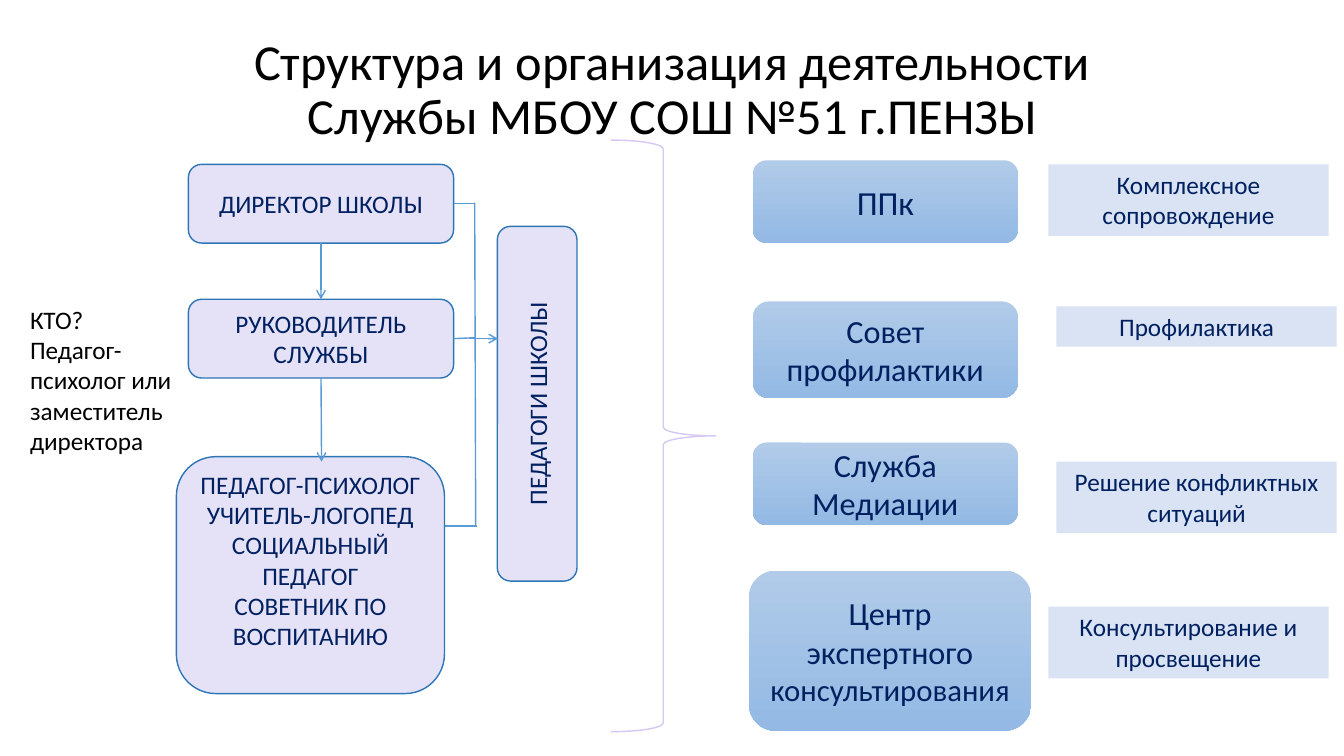
from lxml import etree
from pptx import Presentation
from pptx import util as u
from pptx.dml.color import RGBColor
from pptx.enum import shapes, text
from pptx.oxml import ns

COLORS = {
    "title": "000000", "ink": "002060", "staff": "E5E2F7", "border": "2E75B6",
    "arrow": "5B9BD5", "brace": "D5C8F4", "task": "DAE3F3",
    "unit_top": "B1CBE9", "unit_bottom": "93B9E4",
}
FONT = "Calibri"
CENTER = text.PP_ALIGN.CENTER
MIDDLE = text.MSO_ANCHOR.MIDDLE
TOP = text.MSO_ANCHOR.TOP
KINDS = shapes.MSO_SHAPE


def rgb(name):
    """Return the named palette colour."""
    return RGBColor.from_string(COLORS[name])


def apply(target, values):
    """Set each attribute of the target from a dict."""
    for name, value in values.items():
        setattr(target, name, value)


def points(*lengths):
    """Convert numbers to point lengths."""
    return [u.Pt(length) for length in lengths]


def write(frame, paragraphs, color, align=CENTER, anchor=MIDDLE, **frame_format):
    """Fill a text frame with paragraphs made of (text, size) runs."""
    apply(frame, {"word_wrap": True, "auto_size": text.MSO_AUTO_SIZE.NONE,
                  "vertical_anchor": anchor, **frame_format})
    for index, runs in enumerate(paragraphs):
        paragraph = frame.add_paragraph() if index else frame.paragraphs[0]
        paragraph.alignment = align
        for words, size in runs:
            run = paragraph.add_run()
            run.text = words
            apply(run.font, {"name": FONT, "size": u.Pt(size)})
            run.font.color.rgb = rgb(color)


def add_title(slide, words):
    """Place and format the slide title."""
    title = slide.shapes.title
    left, top, width, height = points(111.6, 13, 737.3, 104.4)
    apply(title, {"left": left, "top": top, "width": width, "height": height})
    write(title.text_frame, [[(words, 36)]], "title")
    title.text_frame.paragraphs[0].line_spacing = 0.9


def add_block(slide, kind, box, fill=None, line=None):
    """Add a preset shape with a plain fill and outline."""
    block = slide.shapes.add_shape(kind, *points(*box))
    block.shadow.inherit = False
    if fill:
        block.fill.solid()
        block.fill.fore_color.rgb = rgb(fill)
    else:
        block.fill.background()
    if line:
        block.line.color.rgb = rgb(line)
        block.line.width = u.Pt(1)
    else:
        block.line.fill.background()
    return block


def add_staff(slide, box, lines, **frame_format):
    """Add a rounded, outlined box for a staff role."""
    staff = add_block(slide, KINDS.ROUNDED_RECTANGLE, box, "staff", "border")
    write(staff.text_frame, [[(words, 18)] for words in lines], "ink", **frame_format)
    return staff


def add_unit(slide, box, runs):
    """Add a rounded gradient box for a unit of the service."""
    unit = add_block(slide, KINDS.ROUNDED_RECTANGLE, box)
    unit.fill.gradient()
    unit.fill.gradient_angle = 270
    for stop, position, name in zip(unit.fill.gradient_stops, (0, 1),
                                    ("unit_top", "unit_bottom")):
        stop.position = position
        stop.color.rgb = rgb(name)
    write(unit.text_frame, [runs], "ink")


def add_task(slide, box, words):
    """Add a flat label with the task of a unit."""
    task = add_block(slide, KINDS.RECTANGLE, box, "task")
    write(task.text_frame, [[(words, 18)]], "ink", anchor=TOP)


def add_link(slide, ends, arrow=False, begin=None, end=None):
    """Add a straight line, joined to (shape, site) pairs where given."""
    link = slide.shapes.add_connector(shapes.MSO_CONNECTOR.STRAIGHT, *points(*ends))
    link.line.color.rgb = rgb("arrow")
    link.line.width = u.Pt(1)
    if begin:
        link.begin_connect(*begin)
    if end:
        link.end_connect(*end)
    properties = link._element.spPr
    if arrow:
        outline = properties.find(ns.qn("a:ln"))
        etree.SubElement(outline, ns.qn("a:tailEnd"), type="arrow")
    etree.SubElement(properties, ns.qn("a:effectLst"))


def add_staff_scheme(slide):
    """Draw the staff roles, the note beside them and their links."""
    director = add_staff(slide, (134.6, 117.4, 189.4, 56.2), ["ДИРЕКТОР ШКОЛЫ"])
    leader = add_staff(slide, (134.6, 213.8, 189.4, 56.2), ["РУКОВОДИТЕЛЬ СЛУЖБЫ"])
    add_staff(slide, (126, 326.2, 191.5, 169.2),
              ["ПЕДАГОГ-ПСИХОЛОГ", "УЧИТЕЛЬ-ЛОГОПЕД", "СОЦИАЛЬНЫЙ ПЕДАГОГ",
               "СОВЕТНИК ПО ВОСПИТАНИЮ"], margin_bottom=u.Pt(25.2))
    teachers = add_staff(slide, (257, 259.9, 253.4, 56.9), ["ПЕДАГОГИ ШКОЛЫ"])
    teachers.rotation = 270

    note = slide.shapes.add_textbox(*points(14.4, 213.8, 133.9, 115.9))
    write(note.text_frame,
          [[("КТО?", 18)], [("Педагог-психолог или заместитель директора", 18)]],
          "title", align=text.PP_ALIGN.LEFT, anchor=TOP)

    add_link(slide, (229.3, 173.6, 229.3, 213.8), True, (director, 2), (leader, 0))
    add_link(slide, (229.3, 270, 229.7, 329.8), True, (leader, 2))
    add_link(slide, (339.1, 144.7, 339.8, 375.8))
    add_link(slide, (334.8, 241.9, 355.7, 241.9), True)
    add_link(slide, (324, 145.5, 338.4, 145.5), begin=(director, 3))
    add_link(slide, (324, 241.9, 339.8, 241.2), begin=(leader, 3))
    add_link(slide, (318.2, 375.8, 340.6, 375.8))


def main():
    """Build the slide and save it."""
    deck = Presentation()
    apply(deck, {"slide_width": u.Pt(960), "slide_height": u.Pt(540)})
    slide = deck.slides.add_slide(deck.slide_layouts[5])
    add_title(slide, "Структура и организация деятельности Службы МБОУ СОШ №51 г.ПЕНЗЫ")
    add_staff_scheme(slide)
    add_block(slide, KINDS.RIGHT_BRACE, (436.3, 100.1, 74.9, 422.6), line="brace")

    units = [
        ((537.8, 114.5, 189.4, 59), [("ППк", 24)]),
        ((537.8, 215.3, 189.4, 69.1), [("Совет профилактики", 23)]),
        ((537.8, 316.1, 189.4, 59), [("Служба Медиации", 23)]),
        ((535, 407.5, 201.6, 114.5),
         [("Центр экспертного ", 23), ("консультирования", 22)]),
    ]
    for box, runs in units:
        add_unit(slide, box, runs)

    tasks = [
        (748.8, 117.4, 51.1, "Комплексное сопровождение"),
        (754.6, 218.9, 28.8, "Профилактика"),
        (754.6, 329.8, 51.1, "Решение конфликтных ситуаций"),
        (748.8, 433.4, 51.1, "Консультирование и просвещение"),
    ]
    for left, top, height, words in tasks:
        add_task(slide, (left, top, 200.2, height), words)
    deck.save("out.pptx")


if __name__ == "__main__":
    main()
